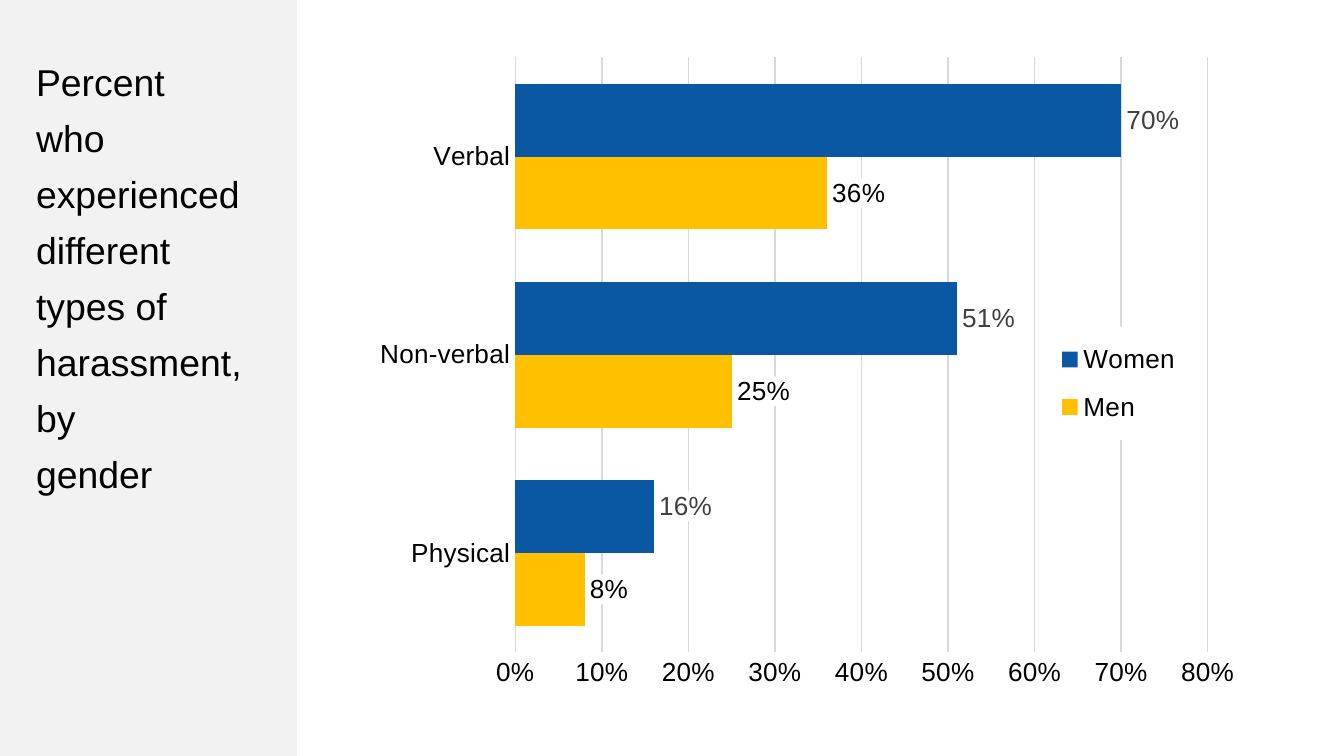
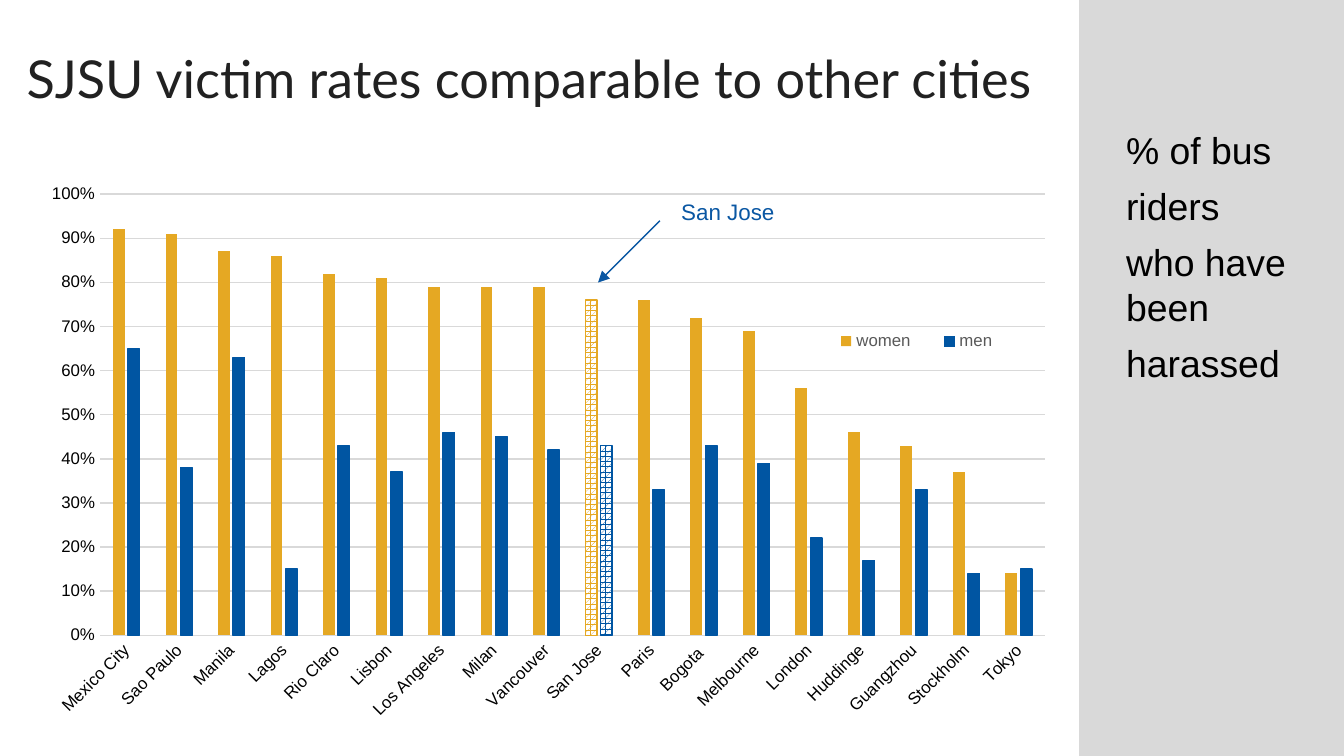
from pptx import Presentation
from pptx.chart.data import CategoryChartData
from pptx.dml.color import RGBColor
from pptx.enum.chart import XL_CHART_TYPE, XL_LABEL_POSITION, XL_LEGEND_POSITION, XL_TICK_MARK
from pptx.enum.dml import MSO_PATTERN
from pptx.enum.shapes import MSO_CONNECTOR, MSO_SHAPE
from pptx.oxml import parse_xml
from pptx.oxml.ns import nsdecls, qn
from pptx.util import Inches, Pt

COLORS = {name: RGBColor.from_string(code) for name, code in {
    "white": "FFFFFF", "black": "000000", "ink": "212121",
    "label": "404040", "muted": "595959", "grid": "D9D9D9",
    "pale_band": "F2F2F2", "dark_band": "D9D9D9",
    "blue": "0A57A3", "yellow": "FFC000",
    "city_women": "E5A823", "city_men": "0055A2",
}.items()}
BODY_FONT, TITLE_FONT = "Arial", "Lato"

deck = Presentation()
deck.slide_width = Inches(10)
deck.slide_height = deck.slide_width * 9 // 16
blank = deck.slide_layouts[6]


def span(x, y, w, h):
    """Turn percentages of the slide's width and height into lengths."""
    return [int(share * side / 100) for share, side in
            zip((x, y, w, h), (deck.slide_width, deck.slide_height) * 2)]


def write(slide, area, lines, size, color, font=BODY_FONT, after=0):
    box = slide.shapes.add_textbox(*span(*area))
    box.text_frame.word_wrap = True
    box.text_frame.text = "\n".join(lines)
    for paragraph in box.text_frame.paragraphs:
        paragraph.space_after = Pt(after)
        for run in paragraph.runs:
            run.font.size, run.font.name = Pt(size), font
            run.font.color.rgb = COLORS[color]
    return box


# Slides with their side bands and side text
types_slide, cities_slide = [deck.slides.add_slide(blank) for _ in range(2)]
for slide, band_area, band_color, words_area, words in (
    (types_slide, (0, 0, 22.1, 100), "pale_band", (1.7, 6.93, 20.4, 60.1),
     ["Percent", "who", "experienced", "different", "types of",
      "harassment,", "by", "gender"]),
    (cities_slide, (80.3, 0, 19.7, 101), "dark_band", (82.8, 16, 17.2, 43.73),
     ["% of bus", "riders", "who have been", "harassed"]),
):
    band = slide.shapes.add_shape(MSO_SHAPE.RECTANGLE, *span(*band_area))
    band.shadow.inherit = False
    band.fill.solid()
    band.fill.fore_color.rgb = COLORS[band_color]
    band.line.fill.background()
    write(slide, words_area, words, 20, "black", after=6)

# Title of the city comparison
headline = write(cities_slide, (1, 4.35, 96.9, 11.2),
                 ["SJSU victim rates comparable to other cities"],
                 28, "ink", font=TITLE_FONT)
headline.text_frame.margin_top = headline.text_frame.margin_bottom = Inches(0.1)

# Harassment by type and gender
type_data = CategoryChartData(number_format="0%")
type_data.categories = ["Physical", "Non-verbal", "Verbal"]
type_data.add_series("Men", (0.08, 0.25, 0.36))
type_data.add_series("Women", (0.16, 0.51, 0.7))
type_chart = types_slide.shapes.add_chart(
    XL_CHART_TYPE.BAR_CLUSTERED, *span(23.8, 0, 76.2, 100), type_data).chart

# Harassment by city: women, men
city_rates = {
    "Mexico City": (0.92, 0.65), "Sao Paulo": (0.91, 0.38),
    "Manila": (0.87, 0.63), "Lagos": (0.86, 0.15),
    "Rio Claro": (0.82, 0.43), "Lisbon": (0.81, 0.37),
    "Los Angeles": (0.79, 0.46), "Milan": (0.79, 0.45),
    "Vancouver": (0.79, 0.42), "San Jose": (0.76, 0.43),
    "Paris": (0.76, 0.33), "Bogota ": (0.72, 0.43),
    "Melbourne": (0.69, 0.39), "London": (0.56, 0.22),
    "Huddinge": (0.46, 0.17), "Guangzhou": (0.43, 0.33),
    "Stockholm": (0.37, 0.14), "Tokyo": (0.14, 0.15),
}
city_data = CategoryChartData(number_format="0%")
city_data.categories = list(city_rates)
for gender, rates in zip(("women", "men"), zip(*city_rates.values())):
    city_data.add_series(gender, rates)
city_chart = cities_slide.shapes.add_chart(
    XL_CHART_TYPE.COLUMN_CLUSTERED, *span(2.3, 22.76, 77, 79.29), city_data).chart

# Shared chart style; plot and legend areas are percentages of the chart
for chart, size, top, gap, overlap, legend_color, fills, plot_area, legend_area in (
    (type_chart, 14, 0.8, 72, 0, "black", ("yellow", "blue"),
     (19.1, 7.6, 67.6, 78.7), (71.5, 43.2, 13, 15)),
    (city_chart, 9, 1, 219, -27, "muted", ("city_women", "city_men"),
     (6.7, 3.7, 91.3, 73.6), (75.6, 25.7, 20, 5)),
):
    chart.has_title = False
    chart.font.size, chart.font.name = Pt(10), BODY_FONT
    chart.font.color.rgb = COLORS["black"]
    chart.has_legend = True
    legend = chart.legend
    legend.position = XL_LEGEND_POSITION.BOTTOM
    legend.include_in_layout = False

    plot = chart.plots[0]
    plot.vary_by_categories = False
    plot.gap_width, plot.overlap = gap, overlap
    for series, fill in zip(plot.series, fills):
        series.invert_if_negative = False
        series.format.fill.solid()
        series.format.fill.fore_color.rgb = COLORS[fill]

    rates_axis, names_axis = chart.value_axis, chart.category_axis
    rates_axis.minimum_scale, rates_axis.maximum_scale = 0, top
    rates_axis.major_unit = 0.1
    rates_axis.tick_labels.number_format = "0%"
    rates_axis.tick_labels.number_format_is_linked = False
    rates_axis.has_major_gridlines = True
    rates_axis.format.line.fill.background()
    for line in (rates_axis.major_gridlines.format.line, names_axis.format.line):
        line.color.rgb, line.width = COLORS["grid"], Pt(0.75)
    for axis in (rates_axis, names_axis):
        axis.major_tick_mark = axis.minor_tick_mark = XL_TICK_MARK.NONE
    for font, color in ((rates_axis.tick_labels.font, "black"),
                        (names_axis.tick_labels.font, "black"),
                        (legend.font, legend_color)):
        font.size, font.name = Pt(size), BODY_FONT
        font.color.rgb = COLORS[color]

    plot_element = chart._chartSpace.chart.plotArea
    for element, index, area, target in (
        (plot_element, 0, plot_area, '<c:layoutTarget val="inner"/>'),
        (legend._element, 1, legend_area, ""),
    ):
        for old in element.findall(qn("c:layout")):
            element.remove(old)
        edges = "".join(f'<c:{edge}Mode val="edge"/>' for edge in "xy")
        shares = "".join(f'<c:{key} val="{share / 100:.3f}"/>'
                         for key, share in zip("xywh", area))
        element.insert(index, parse_xml(
            f'<c:layout {nsdecls("c")}><c:manualLayout>{target}{edges}{shares}'
            "</c:manualLayout></c:layout>"))

# Value labels on white, with the 16% label raised a little
white_backed = [type_chart.legend._element]
men, women = type_chart.plots[0].series
for series, color in ((men, "black"), (women, "label")):
    labels = series.data_labels
    labels.show_value = True
    labels.number_format, labels.number_format_is_linked = "0%", False
    raised = [women.points[0].data_label] if series is women else []
    for label in [labels] + raised:
        label.position = XL_LABEL_POSITION.OUTSIDE_END
        label.font.size, label.font.name = Pt(14), BODY_FONT
        label.font.color.rgb = COLORS[color]
    white_backed.append(labels._element)
raised_label = women.data_labels._element.find(qn("c:dLbl"))
raised_label.find(qn("c:idx")).addnext(parse_xml(
    f'<c:layout {nsdecls("c")}><c:manualLayout><c:x val="0"/><c:y val="-0.014"/>'
    "</c:manualLayout></c:layout>"))
for element in white_backed + [raised_label]:
    element.find(qn("c:txPr")).addprevious(parse_xml(
        f'<c:spPr {nsdecls("c", "a")}><a:solidFill>'
        f'<a:srgbClr val="{COLORS["white"]}"/></a:solidFill></c:spPr>'))

# City chart: slanted names, outlined men's bars, patterned San Jose bars
names_text = city_chart.category_axis._element.find(qn("c:txPr"))
names_text.find(qn("a:bodyPr")).set("rot", str(-45 * 60000))
san_jose = list(city_rates).index("San Jose")
city_women, city_men = city_chart.plots[0].series
for series, color in ((city_women, "city_women"), (city_men, "city_men")):
    pattern = series.points[san_jose].format.fill
    pattern.patterned()
    pattern.pattern = MSO_PATTERN.SPHERE
    pattern.fore_color.rgb = COLORS[color]
    pattern.back_color.rgb = COLORS["white"]
for outlined, color in ((city_women.points[san_jose], "city_women"),
                        (city_men.points[san_jose], "city_men"),
                        (city_men, "city_men")):
    outlined.format.line.color.rgb = COLORS[color]
    outlined.format.line.width = Pt(0.75)

# San Jose callout
pointer = cities_slide.shapes.add_connector(
    MSO_CONNECTOR.STRAIGHT, *span(49.1, 29.2, 44.5, 37.37))
pointer.line.color.rgb, pointer.line.width = COLORS["blue"], Pt(0.75)
pointer.line._get_or_add_ln().append(
    parse_xml(f'<a:tailEnd {nsdecls("a")} type="triangle"/>'))
pointer._element.spPr.append(parse_xml(f'<a:effectLst {nsdecls("a")}/>'))
write(cities_slide, (49.7, 25.3, 11.1, 5.33), ["San Jose"], 12, "blue")

deck.save("out.pptx")
